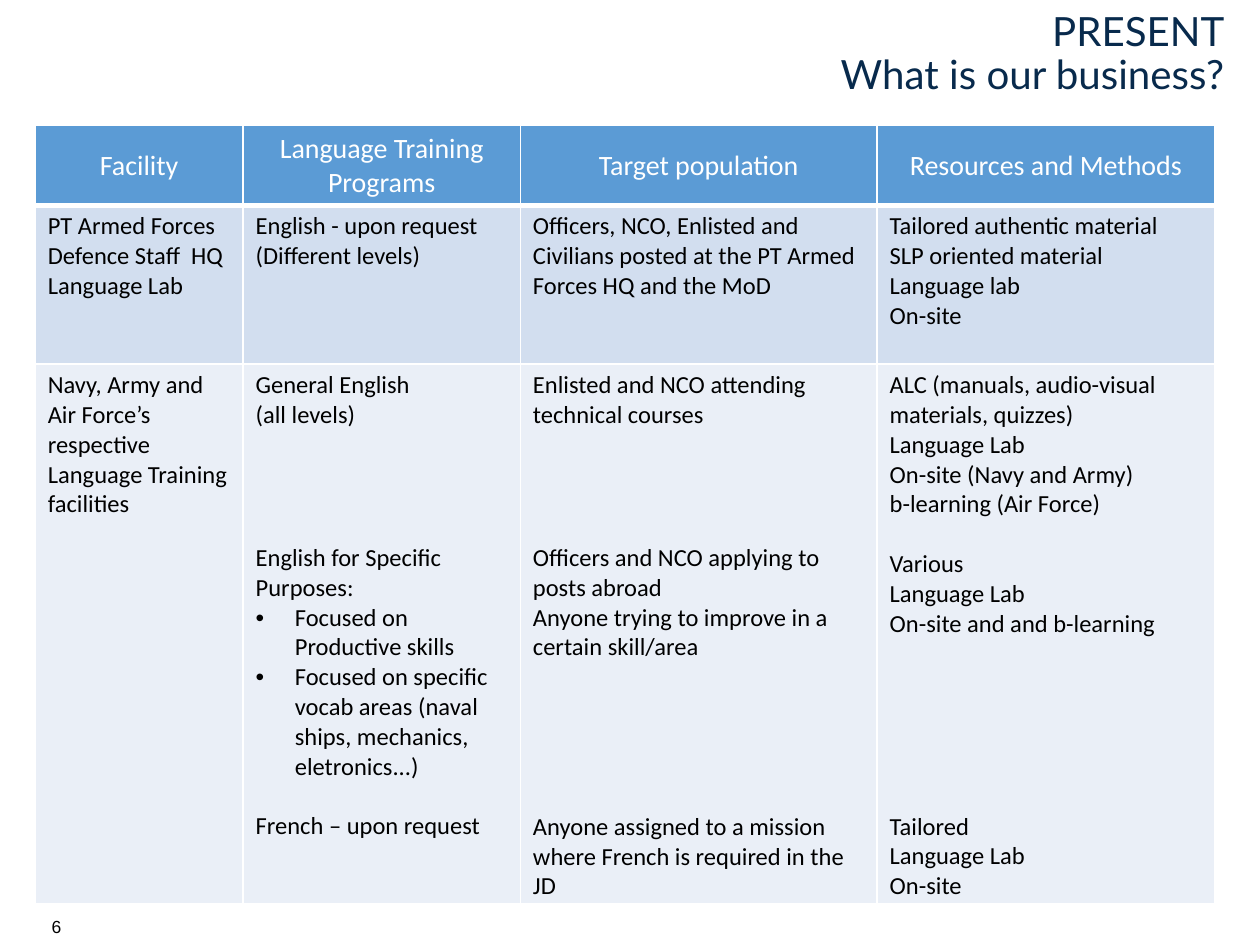
from dataclasses import dataclass

from lxml import etree
from pptx import Presentation
from pptx.dml.color import RGBColor
from pptx.enum.text import MSO_ANCHOR, PP_ALIGN
from pptx.oxml.ns import qn
from pptx.util import Cm, Pt

MIDDLE, TOP = MSO_ANCHOR.MIDDLE, MSO_ANCHOR.TOP
LEFT, CENTER, RIGHT = PP_ALIGN.LEFT, PP_ALIGN.CENTER, PP_ALIGN.RIGHT


@dataclass(frozen=True)
class Theme:
    title_font: str = "Lato"
    table_font: str = "Calibri"
    number_font: str = "Arial"
    title_size: float = 23
    header_size: float = 16
    body_size: float = 14
    number_size: float = 10
    title_color: str = "082A4C"
    text_color: str = "000000"
    header_text: str = "FFFFFF"
    border_color: str = "FFFFFF"
    header_fill: str = "5B9BD5"
    row_fills: tuple = ("D2DEEF", "EAEFF7")


@dataclass(frozen=True)
class Line:
    text: str
    gap: float = 0
    bullet: bool = False


THEME = Theme()
COLUMN_WIDTHS = (4.19, 5.59, 7.19, 6.81)
ROW_HEIGHTS = (1.6, 3.2, 10.76)
HEADERS = ("Facility", "Language Training Programs", "Target population",
           "Resources and Methods")
DEFENCE_STAFF = (
    ("PT Armed Forces Defence Staff  HQ", "Language Lab"),
    ("English - upon request", "(Different levels)"),
    ("Officers, NCO, Enlisted and Civilians posted at the PT Armed Forces HQ and the MoD",),
    ("Tailored authentic material", "SLP oriented material", "Language lab", "On-site"),
)
BRANCHES = (
    ("Navy, Army and Air Force’s respective Language Training facilities",),
    ("General English", "(all levels)",
     Line("English for Specific Purposes:", gap=64.7),
     Line("Focused on Productive skills", bullet=True),
     Line("Focused on specific vocab areas (naval ships, mechanics, eletronics...)",
          bullet=True),
     Line("French – upon request", gap=17.1)),
    ("Enlisted and NCO attending technical courses",
     Line("Officers and NCO applying to posts abroad", gap=64.7),
     "Anyone trying to improve in a certain skill/area",
     Line("Anyone assigned to a mission where French is required in the JD", gap=85.4)),
    ("ALC (manuals, audio-visual materials, quizzes)", "Language Lab",
     "On-site (Navy and Army)", "b-learning (Air Force)",
     Line("Various", gap=17.1), "Language Lab", "On-site and and b-learning",
     Line("Tailored", gap=98.9), "Language Lab", "On-site"),
)


def set_attributes(target, values):
    for name, value in values.items():
        setattr(target, name, value)


def add_bullet(paragraph):
    properties = paragraph._p.get_or_add_pPr()
    properties.set("marL", str(Cm(0.79)))
    properties.set("indent", str(-Cm(0.79)))
    etree.SubElement(properties, qn("a:buFont"), typeface="Arial")
    etree.SubElement(properties, qn("a:buChar"), char="•")


def write_lines(frame, lines, font_name, size, color, **paragraph_format):
    for index, item in enumerate(lines):
        line = item if isinstance(item, Line) else Line(item)
        paragraph = frame.paragraphs[0] if index == 0 else frame.add_paragraph()
        if line.bullet:
            add_bullet(paragraph)
        set_attributes(paragraph, paragraph_format)
        if line.gap:
            paragraph.space_before = Pt(line.gap)
        run = paragraph.add_run()
        run.text = line.text
        set_attributes(run.font, {"name": font_name, "size": Pt(size)})
        run.font.color.rgb = RGBColor.from_string(color)


def add_text(slide, box, lines, frame_format, **text_format):
    shape = slide.shapes.add_textbox(*(Cm(length) for length in box))
    set_attributes(shape.text_frame, {"word_wrap": True, **frame_format})
    write_lines(shape.text_frame, lines, **text_format)


def set_borders(cell, bottom_width):
    properties = cell._tc.get_or_add_tcPr()
    for side, width in {"L": 1, "R": 1, "T": 1, "B": bottom_width}.items():
        border = etree.SubElement(properties, qn(f"a:ln{side}"), w=str(Pt(width)))
        fill = etree.SubElement(border, qn("a:solidFill"))
        etree.SubElement(fill, qn("a:srgbClr"), val=THEME.border_color)


def fill_row(row, contents, fill, anchor, bottom_width, **text_format):
    for cell, lines in zip(row.cells, contents):
        set_borders(cell, bottom_width)
        cell.fill.solid()
        cell.fill.fore_color.rgb = RGBColor.from_string(fill)
        cell.vertical_anchor = anchor
        write_lines(cell.text_frame, lines, THEME.table_font, **text_format)


def add_training_table(slide):
    table = slide.shapes.add_table(
        len(ROW_HEIGHTS), len(COLUMN_WIDTHS), Cm(0.71), Cm(2.53),
        Cm(sum(COLUMN_WIDTHS)), Cm(sum(ROW_HEIGHTS))).table
    for column, width in zip(table.columns, COLUMN_WIDTHS):
        column.width = Cm(width)
    for row, height in zip(table.rows, ROW_HEIGHTS):
        row.height = Cm(height)
    fill_row(table.rows[0], [(header,) for header in HEADERS], THEME.header_fill,
             MIDDLE, 3, size=THEME.header_size, color=THEME.header_text,
             alignment=CENTER)
    for index, contents in enumerate((DEFENCE_STAFF, BRANCHES)):
        fill_row(table.rows[index + 1], contents, THEME.row_fills[index], TOP, 1,
                 size=THEME.body_size, color=THEME.text_color, alignment=LEFT)


def main():
    presentation = Presentation()
    set_attributes(presentation, {"slide_width": Cm(25.4), "slide_height": Cm(19.05)})
    slide = presentation.slides.add_slide(presentation.slide_layouts[6])
    add_text(slide, (0.79, 18.34, 1.3, 0.69), ["6"], {},
             font_name=THEME.number_font, size=THEME.number_size,
             color=THEME.text_color)
    add_text(slide, (0, 0.28, 25.4, 1.65), ["PRESENT", "What is our business?"],
             {"vertical_anchor": MIDDLE, "margin_right": Cm(0.71)},
             font_name=THEME.title_font, size=THEME.title_size,
             color=THEME.title_color, alignment=RIGHT, line_spacing=0.9)
    add_training_table(slide)
    presentation.save("out.pptx")


if __name__ == "__main__":
    main()
